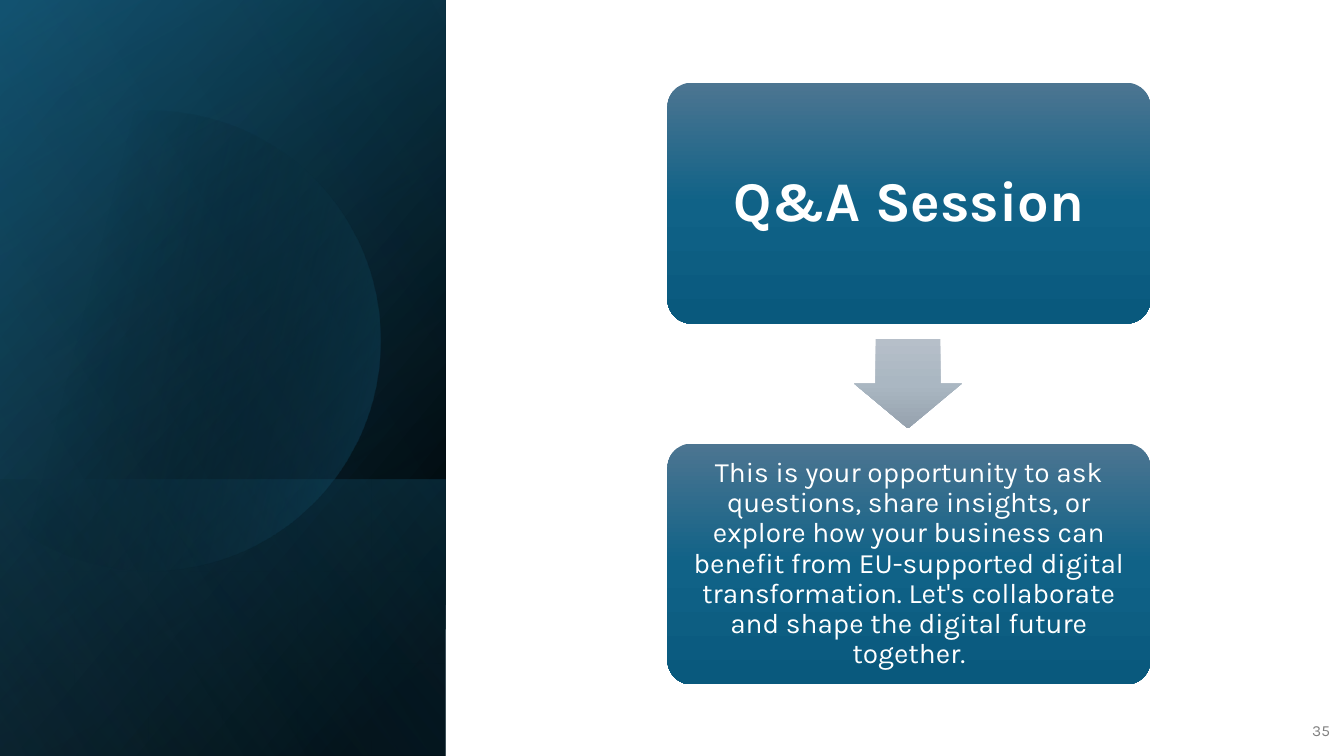
from math import acos, cos, sin
from lxml.etree import SubElement
from pptx import Presentation
from pptx.dml.color import RGBColor
from pptx.enum.shapes import MSO_SHAPE
from pptx.enum.text import MSO_ANCHOR, PP_ALIGN
from pptx.oxml.ns import qn
from pptx.util import Pt

SCALE = 9144
CARD = [(0, "4C7591"), (50, "106287"), (100, "09597D")]
ARROW = [(0, "B6BFC9"), (50, "AAB7C2"), (100, "96A2AE")]


def px(size):
    return round(size * SCALE)


def color(code):
    return RGBColor.from_string(code)


class Deck:
    font = "Karla"

    def __init__(self, wide, high):
        self.file = Presentation()
        self.file.slide_width, self.file.slide_height = px(wide), px(high)
        self.slide = self.file.slides.add_slide(self.file.slide_layouts[6])

    def paint(self, shape, stops, angle):
        shape.shadow.inherit = False
        shape.line.fill.background()
        shape.fill.gradient()
        grad = shape._element.spPr.find(qn("a:gradFill"))
        grad.set("rotWithShape", "1")
        for child in list(grad):
            grad.remove(child)
        group = SubElement(grad, qn("a:gsLst"))
        for spot, code, *alpha in stops:
            stop = SubElement(group, qn("a:gs"), pos=str(spot * 1000))
            tint = SubElement(stop, qn("a:srgbClr"), val=str(color(code)))
            for part in alpha:
                SubElement(tint, qn("a:alpha"), val=str(part * 1000))
        SubElement(grad, qn("a:lin"), ang=str(angle * 60000), scaled="0")

    def shape(self, kind, box, stops, angle, turn=0, flip=False, adjust=()):
        shape = self.slide.shapes.add_shape(kind, *map(px, box))
        shape.rotation = turn
        if flip:
            shape._element.spPr.find(qn("a:xfrm")).set("flipH", "1")
        for spot, value in enumerate(adjust):
            shape.adjustments[spot] = value
        self.paint(shape, stops, angle)
        return shape

    def panel(self, box, stops, angle):
        return self.shape(MSO_SHAPE.RECTANGLE, box, stops, angle, 90, True)

    def disc(self, left, mid, top, radius, stops, angle):
        edge = acos((left - mid) / radius)
        steps = 120
        turns = [edge * (2 * step / steps - 1) for step in range(steps + 1)]
        dots = [(px(mid + radius * cos(turn)), px(top + radius * sin(turn)))
                for turn in turns]
        form = self.slide.shapes.build_freeform(*dots[0], scale=1.0)
        form.add_line_segments(dots[1:], close=True)
        self.paint(form.convert_to_shape(), stops, angle)

    def text(self, shape, words, size, code, align, inset, bold=False):
        frame = shape.text_frame
        frame.text = words
        frame.word_wrap = True
        frame.vertical_anchor = MSO_ANCHOR.MIDDLE
        frame.margin_left = frame.margin_right = px(inset)
        frame.margin_top = frame.margin_bottom = px(inset)
        line = frame.paragraphs[0]
        line.alignment = align
        line.line_spacing = 0.9
        font = line.runs[0].font
        font.name, font.size, font.bold = self.font, Pt(size), bold
        font.color.rgb = color(code)

    def card(self, top, words, size, inset, bold=False):
        shape = self.shape(MSO_SHAPE.ROUNDED_RECTANGLE, (662, top, 479, 239),
                           CARD, 90, adjust=[0.1])
        self.text(shape, words, size, "FFFFFF", PP_ALIGN.CENTER, inset, bold)

    def label(self, box, words, size, code, align):
        shape = self.slide.shapes.add_textbox(*map(px, box))
        self.text(shape, words, size, code, align, 10)


def main():
    deck = Deck(1333, 750)
    side = (-154, 154, 750, 442)
    deck.panel(side, [(8, "000000"), (100, "104862")], 50)
    deck.panel(side, [(0, "000000", 0), (99, "156082", 46)], 30)
    deck.panel((84, 392, 274, 442),
               [(2, "156082", 29), (100, "000000", 30)], 130)
    deck.disc(-15, 149, 338, 228,
              [(29, "000000", 0), (100, "156082", 43)], 14)
    deck.panel(side, [(0, "000000", 0), (99, "46B1E1", 11)], 120)
    deck.label((1280, 706, 49, 40), "35", 11, "808080", PP_ALIGN.RIGHT)
    deck.card(82, "Q&A Session", 40, 17, True)
    deck.shape(MSO_SHAPE.RIGHT_ARROW, (856, 327, 89, 107), ARROW, 0, 90,
               adjust=[0.6, 0.5])
    deck.card(440, "This is your opportunity to ask questions, share insights, "
              "or explore how your business can benefit from EU-supported "
              "digital transformation. Let's collaborate and shape the "
              "digital future together.", 20, 8)
    deck.file.save("out.pptx")


if __name__ == "__main__":
    main()
